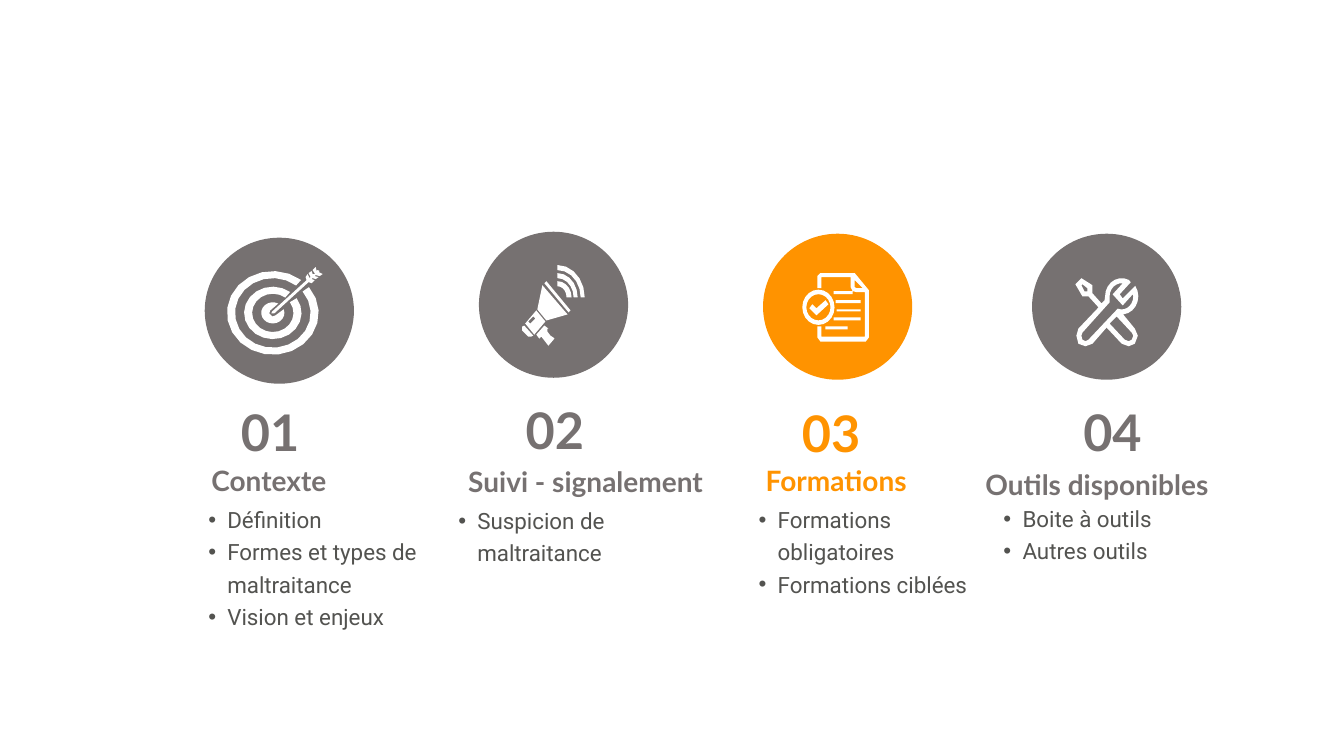
"""Build the four-part agenda slide with its third part highlighted."""
from math import ceil, cos, radians, sin

from lxml.etree import SubElement
from pptx import Presentation
from pptx.dml.color import RGBColor
from pptx.enum.shapes import MSO_SHAPE
from pptx.enum.text import MSO_AUTO_SIZE, PP_ALIGN
from pptx.oxml.ns import qn
from pptx.util import Cm, Pt

GREY, ORANGE, TEXT, WHITE = "767171", "FF9300", "535350", "FFFFFF"
ICON_UNIT = Cm(0.0254)
CIRCLE_SIZE = Cm(3.76), Cm(3.68)
ARC_STEP = 18


def color(value):
    """Return the colour for a hex string."""
    return RGBColor.from_string(value)


def arc(x, y, radius_x, radius_y, start=0, end=360):
    """Return points along an elliptical arc, in degrees."""
    steps = ceil(abs(end - start) / ARC_STEP)
    angles = [radians(start + (end - start) * i / steps) for i in range(steps + 1)]
    return [(x + radius_x * cos(a), y + radius_y * sin(a)) for a in angles]


def band(x, y, inner, outer, start, end):
    """Return the contour of a band between two arcs."""
    return arc(x, y, *outer, start, end) + arc(x, y, *inner, end, start)


def bar(left, top, right, bottom):
    """Return the contour of a rectangle."""
    return [(left, top), (right, top), (right, bottom), (left, bottom)]


def target_icon():
    """Return the contours of a target hit by an arrow."""
    arrow = [(95, 7), (92, 9), (88, 8), (87, 9), (91, 10), (88, 12), (85, 11),
             (84, 12), (87, 13), (84, 16), (81, 15), (47, 46), (44, 46), (45, 44),
             (79, 13), (78, 10), (80, 7), (82, 11), (83, 10), (81, 6), (84, 4),
             (85, 7), (87, 7), (87, 6), (85, 3), (88, 0), (89, 4), (90, 3),
             (92, 4), (91, 5)]
    return [
        band(45.5, 45.5, (37.5, 34.5), (45.5, 41.5), -38, 308),
        band(45.5, 45.5, (20.5, 19), (28.5, 26), -34, 307),
        arc(45.5, 45.5, 11.5, 10.5, -20, 298) + [(43, 43), (42, 46), (45, 49), (48, 48)],
        arrow,
    ]


def megaphone_icon():
    """Return the contours of a megaphone with sound waves."""
    waves = [((9, 11), (14, 16)), ((16, 19), (20, 24)), ((23, 27), (27, 32))]
    return [band(35, 32, inner, outer, -90, 0) for inner, outer in waves] + [
        [(0, 61), (0, 65), (6, 71), (9, 71), (11, 70), (2, 60)],
        [(23, 56), (12, 69), (3, 58), (14, 45)],
        [(13, 53), (11, 51), (6, 56), (8, 58)],
        [(22, 18), (46, 47), (48, 45), (24, 16)],
        [(15, 44), (24, 55), (45, 49), (20, 20)],
        [(31, 72), (28, 70), (25, 66), (25, 63), (26, 63), (22, 60), (14, 69),
         (17, 73), (19, 71), (26, 80), (32, 73)],
    ]


def document_icon():
    """Return the contours of a checked document."""
    return [
        [(66, 17), (66, 64), (63, 68), (18, 68), (15, 64), (15, 53), (19, 53),
         (19, 63), (62, 63), (62, 19), (54, 19), (50, 18), (48, 14), (48, 4), (19, 4),
         (19, 15), (15, 15), (15, 3), (18, 0), (52, 0)],
        [(60, 15), (52, 7), (52, 14), (54, 15)],
        [(26, 31), (14, 42), (7, 35), (10, 31), (14, 35), (23, 27)],
        arc(16, 34, 16, 17.5),
        arc(16, 34, 12, 13),
        bar(31, 18, 50, 21),
        bar(33, 27, 58, 30),
        bar(34, 36, 58, 38),
        bar(31, 44, 58, 47),
        bar(23, 53, 45, 56),
    ]


def tools_icon():
    """Return the contours of a crossed wrench and screwdriver."""
    outline = arc(46, 18, 16.5, 18, 85, -35)
    outline += [(47, 20), (44, 16), (55, 4)]
    outline += arc(46, 18, 16.5, 18, -65, -180)
    outline += [(29, 22), (26, 25), (17, 15), (17, 7), (6, 0), (0, 6), (7, 18),
                (13, 18), (23, 29), (3, 50), (1, 57), (3, 65), (10, 67.5), (17, 65),
                (31, 49), (46, 65), (53, 67.5), (59, 65), (62, 57), (59, 50)]
    wrench = [(13, 61), (10, 62.5), (7, 61), (6, 57), (7, 54), (34, 24)]
    wrench += arc(46, 18, 12, 13, 180, 275)
    wrench += [(37, 16), (47, 27), (57, 16)]
    wrench += arc(46, 18, 11.5, 13, 0, 110)
    return [
        outline,
        wrench,
        [(9, 13), (6, 7), (7, 6), (12, 10), (12, 13)],
        [(56, 61), (53, 62.5), (49, 61), (34, 45), (41, 38), (56, 54), (57.5, 57)],
    ]


def paint(shape, fill):
    """Give a shape a flat fill without line or shadow."""
    shape.fill.solid()
    shape.fill.fore_color.rgb = color(fill)
    shape.line.fill.background()
    shape.shadow.inherit = False


def add_circle(slide, left, top, fill):
    """Add the disc behind an icon."""
    paint(slide.shapes.add_shape(MSO_SHAPE.OVAL, Cm(left), Cm(top), *CIRCLE_SIZE), fill)


def add_icon(slide, left, top, contours):
    """Add one white freeform made of several contours."""
    placed = [[(Cm(left) + x * ICON_UNIT, Cm(top) + y * ICON_UNIT) for x, y in contour]
              for contour in contours]
    builder = slide.shapes.build_freeform(*placed[0][0])
    for index, contour in enumerate(placed):
        if index:
            builder.move_to(*contour[0])
        builder.add_line_segments(contour[1:], close=True)
    paint(builder.convert_to_shape(), WHITE)


def add_bullet(paragraph):
    """Give a paragraph a round bullet with a hanging indent."""
    properties = paragraph._p.get_or_add_pPr()
    properties.set("marL", str(Cm(0.48)))
    properties.set("indent", str(-Cm(0.48)))
    SubElement(properties, qn("a:buFont"), typeface="Arial")
    SubElement(properties, qn("a:buChar"), char="•")


def add_text(slide, text, box, *, size, fill, font="Lato", bold=False,
             align=PP_ALIGN.LEFT, bullets=False):
    """Add a text box with one paragraph per line of text."""
    frame = slide.shapes.add_textbox(*map(Cm, box)).text_frame
    frame.word_wrap = True
    frame.auto_size = MSO_AUTO_SIZE.SHAPE_TO_FIT_TEXT
    frame.text = text
    for paragraph in frame.paragraphs:
        if bullets:
            add_bullet(paragraph)
        paragraph.alignment = align
        paragraph.line_spacing = 1.2
        for run in paragraph.runs:
            run.font.name = font
            run.font.size = Pt(size)
            run.font.bold = bold
            run.font.color.rgb = color(fill)


def add_part(slide, number, fill, circle, icon, contours, number_at, title, title_box,
             points, points_box):
    """Add one agenda part: icon, number, title and points."""
    add_circle(slide, *circle, fill)
    add_icon(slide, *icon, contours)
    add_text(slide, title, title_box, size=20, fill=fill, bold=True, align=PP_ALIGN.CENTER)
    add_text(slide, number, (*number_at, 2.18, 1.93), size=36, fill=fill, bold=True)
    add_text(slide, points, points_box, size=16, fill=TEXT, font="Roboto", bullets=True)


def main():
    """Create the presentation and save it."""
    presentation = Presentation()
    presentation.slide_width, presentation.slide_height = Cm(33.87), Cm(19.05)
    slide = presentation.slides.add_slide(presentation.slide_layouts[6])
    add_part(slide, "01", GREY, (5.16, 5.99), (5.72, 6.73), target_icon(), (5.82, 9.68),
             "Contexte", (3.89, 11.38, 5.77, 1.19),
             "Définition\nFormes et types de maltraitance\nVision et enjeux",
             (5, 12.5, 5.77, 3.45))
    add_part(slide, "02", GREY, (12.07, 5.84), (13.16, 6.68), megaphone_icon(), (13, 9.63),
             "Suivi - signalement", (10.39, 11.4, 8.74, 1.19),
             "Suspicion de maltraitance", (11.3, 12.52, 6.93, 1.83))
    add_part(slide, "03", ORANGE, (19.23, 5.89), (20.22, 6.88), document_icon(), (19.96, 9.7),
             "Formations", (18.19, 11.38, 5.77, 1.19),
             "Formations obligatoires\nFormations ciblées", (18.87, 12.5, 6.17, 2.64))
    add_part(slide, "04", GREY, (26.01, 5.89), (27.1, 7.01), tools_icon(), (27.05, 9.68),
             "Outils disponibles", (24.28, 11.48, 6.73, 1.19),
             "Boite à outils\nAutres outils", (25.04, 12.47, 5.16, 1.83))
    presentation.save("out.pptx")


if __name__ == "__main__":
    main()
